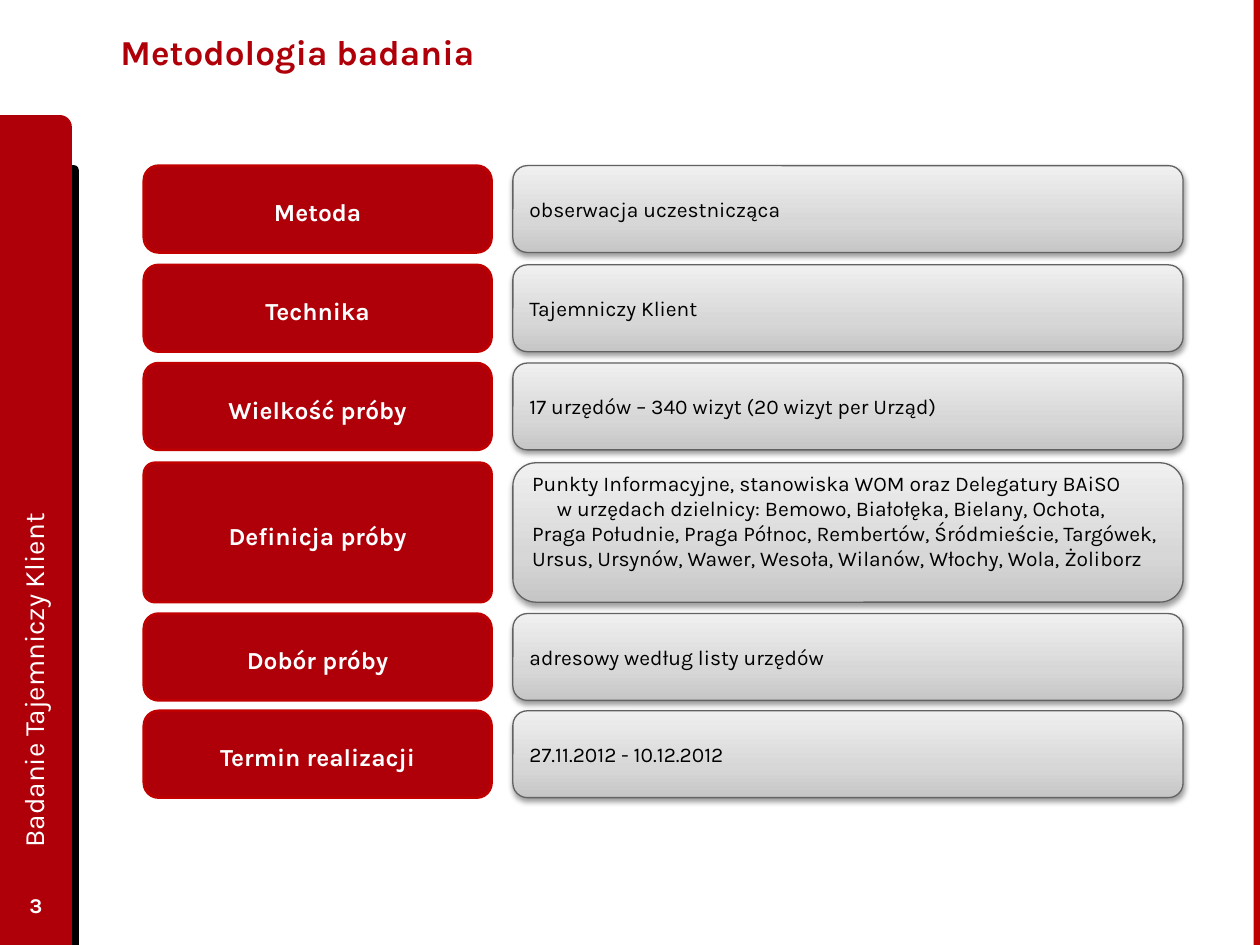
from lxml import etree
from pptx import Presentation
from pptx.dml.color import RGBColor
from pptx.enum.shapes import MSO_SHAPE
from pptx.enum.text import MSO_ANCHOR, PP_ALIGN
from pptx.oxml import parse_xml
from pptx.oxml.ns import nsdecls, qn
from pptx.util import Cm, Pt

LEFT, CENTER = PP_ALIGN.LEFT, PP_ALIGN.CENTER
MIDDLE = MSO_ANCHOR.MIDDLE
RECTANGLE = MSO_SHAPE.RECTANGLE
ROUNDED = MSO_SHAPE.ROUNDED_RECTANGLE
ONE_ROUNDED = MSO_SHAPE.ROUND_1_RECTANGLE

RED, WHITE, BLACK = "AF000A", "FFFFFF", "000000"
GREY_STOPS = [(0, "C6C6C6"), (35000, "D7D7D7"), (100000, "F0F0F0")]


def color(hex_text):
    return RGBColor.from_string(hex_text)


def write(shape, lines, size, ink, bold=False, align=LEFT, spacing=None):
    frame = shape.text_frame
    frame.word_wrap = True
    frame.vertical_anchor = MIDDLE
    for index, line in enumerate(lines):
        para = frame.add_paragraph() if index else frame.paragraphs[0]
        para.alignment = align
        if spacing:
            para.line_spacing = spacing
        span = para.add_run()
        span.text = line
        span.font.name = "Karla"
        span.font.size = Pt(size)
        span.font.bold = bold
        span.font.color.rgb = color(ink)


deck = Presentation()
deck.slide_width, deck.slide_height = Cm(25.4), Cm(19.05)
slide = deck.slides.add_slide(deck.slide_layouts[6])
shapes = slide.shapes

for kind, left, top, width, height, fill in [
    (ONE_ROUNDED, 1, 3.33, 0.59, 15.72, BLACK),
    (ONE_ROUNDED, 0, 2.32, 1.45, 16.73, RED),
    (RECTANGLE, 25.27, 0, 0.13, 19.05, "BD0000"),
]:
    bar = shapes.add_shape(kind, Cm(left), Cm(top), Cm(width), Cm(height))
    bar.shadow.inherit = False
    bar.fill.solid()
    bar.fill.fore_color.rgb = color(fill)
    bar.line.fill.background()

title = shapes.add_textbox(Cm(2.18), Cm(0.13), Cm(19.74), Cm(1.83))
write(title, ["Metodologia badania"], 20, RED, bold=True)

side_title = shapes.add_textbox(Cm(-6.65), Cm(9.37), Cm(14.63), Cm(1.3))
side_title.rotation = 270
write(side_title, ["Badanie Tajemniczy Klient"], 16, WHITE)

page_number = shapes.add_textbox(Cm(0), Cm(17.73), Cm(1.45), Cm(1.02))
write(page_number, ["3"], 12, WHITE, bold=True, align=CENTER)

definition = [
    "Punkty Informacyjne, stanowiska WOM oraz Delegatury BAiSO",
    "w urzędach dzielnicy: Bemowo, Białołęka, Bielany, Ochota,",
    "Praga Południe, Praga Północ, Rembertów, Śródmieście, Targówek, "
    "Ursus, Ursynów, Wawer, Wesoła, Wilanów, Włochy, Wola, Żoliborz",
]
rows = [
    (3.34, 1.75, "Metoda", ["obserwacja uczestnicząca"]),
    (5.34, 1.75, "Technika", ["Tajemniczy Klient"]),
    (7.32, 1.75, "Wielkość próby", ["17 urzędów – 340 wizyt (20 wizyt per Urząd)"]),
    (9.33, 2.81, "Definicja próby", definition),
    (12.37, 1.75, "Dobór próby", ["adresowy według listy urzędów"]),
    (14.33, 1.75, "Termin realizacji", ["27.11.2012 - 10.12.2012"]),
]

for top, height, label, lines in rows:
    name_box = shapes.add_shape(ROUNDED, Cm(2.9), Cm(top), Cm(7.01), Cm(height))
    name_box.adjustments[0] = 0.08 if lines is definition else 0.17
    name_box.shadow.inherit = False
    name_box.fill.solid()
    name_box.fill.fore_color.rgb = color(RED)
    name_box.line.color.rgb = color("C00000")
    name_box.line.width = Pt(1.5)
    write(name_box, [label], 14, WHITE, bold=True, align=CENTER, spacing=1.2)

    value_box = shapes.add_shape(ROUNDED, Cm(10.34), Cm(top), Cm(13.51), Cm(height))
    value_box.shadow.inherit = False
    value_box.line.color.rgb = color("626262")
    value_box.line.width = Pt(0.75)
    stops = "".join(
        f'<a:gs pos="{pos}"><a:srgbClr val="{grey}"/></a:gs>' for pos, grey in GREY_STOPS
    )
    gradient = parse_xml(
        f'<a:gradFill {nsdecls("a")} rotWithShape="1"><a:gsLst>{stops}</a:gsLst>'
        '<a:lin ang="16200000" scaled="1"/></a:gradFill>'
    )
    properties = value_box._element.spPr
    properties.find(qn("a:prstGeom")).addnext(gradient)
    shadow = etree.SubElement(
        properties.find(qn("a:effectLst")), qn("a:outerShdw"),
        blurRad="40000", dist="20000", dir="5400000", rotWithShape="0",
    )
    tint = etree.SubElement(shadow, qn("a:srgbClr"), val=BLACK)
    etree.SubElement(tint, qn("a:alpha"), val="38000")
    write(value_box, lines, 12, BLACK)
    if lines is definition:
        value_box.text_frame.margin_bottom = Cm(0.6)
        indented = value_box.text_frame.paragraphs[1]._p.get_or_add_pPr()
        indented.set("marL", "0")
        indented.set("indent", str(Cm(0.5)))

deck.save("out.pptx")
